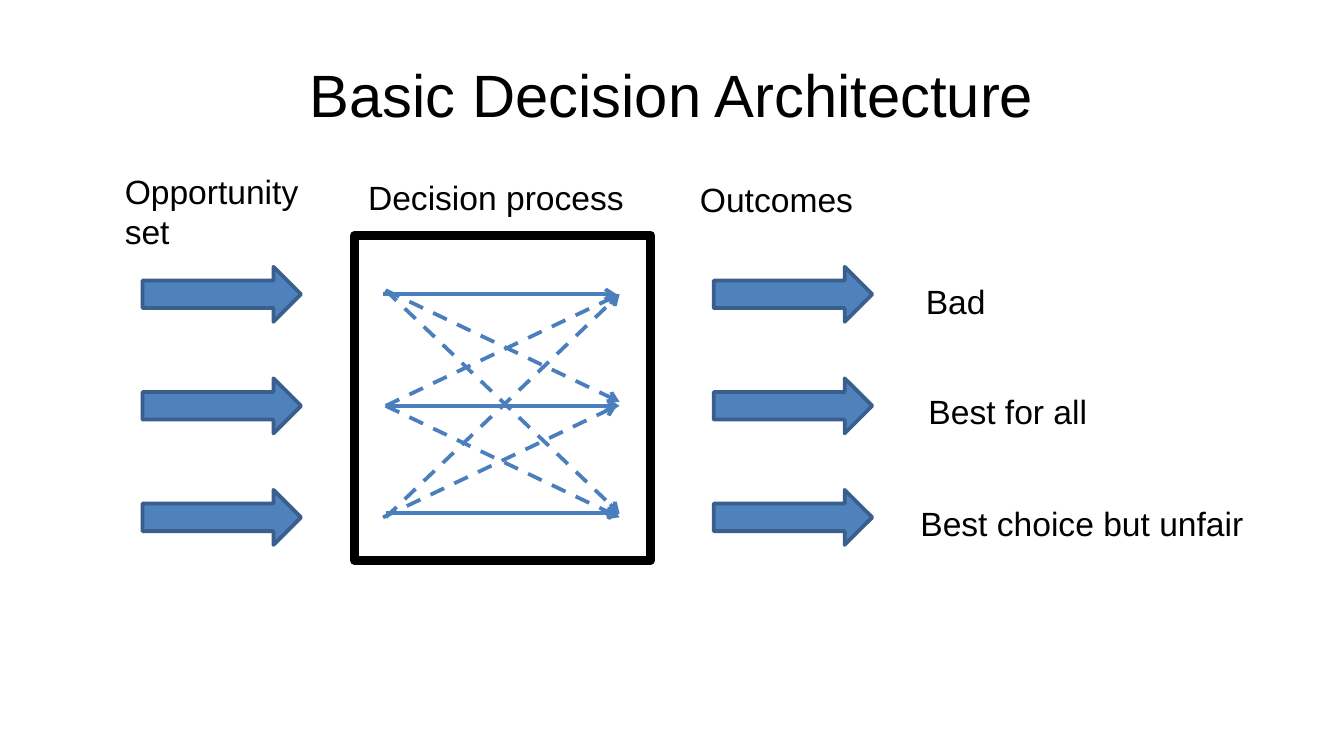
import pptx
import pptx.util
from pptx.dml.color import RGBColor
from pptx.enum.dml import MSO_LINE
from pptx.enum.shapes import MSO_CONNECTOR, MSO_SHAPE
from pptx.enum.text import MSO_ANCHOR, MSO_AUTO_SIZE, PP_ALIGN
from pptx.oxml.ns import qn
from lxml import etree

Inches = pptx.util.Inches

# Content
TITLE = "Basic Decision Architecture"
# text, (left, top, width, height), wraps
LABELS = [
    ("Opportunity set", (0.83, 1.22, 1.65, 0.71), True),
    ("Decision process", (2.64, 1.27, 2.12, 0.4), False),
    ("Outcomes", (5.11, 1.28, 1.35, 0.4), False),
    ("Bad", (6.79, 2.04, 0.65, 0.4), False),
    ("Best for all", (6.81, 2.86, 1.39, 0.4), False),
    ("Best choice but unfair", (6.75, 3.69, 2.63, 0.4), False),
]
# opportunity row, outcome row, shift right, shift down
CHOICES = [
    (1, 1, 0, 0), (1, 0, 0, 0), (2, 0, 0, 0),
    (0, 0, -0.02, 0), (0, 1, 0, -0.03), (0, 2, 0, -0.03),
    (2, 2, 0, -0.03), (1, 2, 0, 0), (2, 1, -0.02, 0),
]

THEME = {
    "font": "Arial", "title": 32, "label": 18,
    "text": "000000", "frame": "000000", "frame_width": 5,
    "arrow": "4F81BD", "arrow_edge": "3A5F8C", "choice": "4B7EBC",
    "line_width": 2,
}

# Layout
PAGE_WIDTH = Inches(10)
PAGE_HEIGHT = PAGE_WIDTH * 9 // 16
ROW_TOP, ROW_STEP, ROWS = 2.19, 0.83, 3
ARROW_LEFTS, ARROW_WIDTH, ARROW_HEIGHT = (1.06, 5.31), 1.18, 0.41
CHOICE_LEFT, CHOICE_RIGHT = 2.87, 4.61
FRAME = (2.64, 1.75, 2.2, 2.42)


def row_center(row):
    return ROW_TOP + row * ROW_STEP


def write(box, text, size, align=PP_ALIGN.LEFT, anchor=MSO_ANCHOR.TOP,
          wrap=True, fit=MSO_AUTO_SIZE.NONE):
    frame = box.text_frame
    frame.word_wrap = wrap
    frame.auto_size = fit
    frame.vertical_anchor = anchor
    para = frame.paragraphs[0]
    para.alignment = align
    span = para.add_run()
    span.text = text
    span.font.name = THEME["font"]
    span.font.size = pptx.util.Pt(size)
    span.font.color.rgb = RGBColor.from_string(THEME["text"])


def set_line(line, color, width):
    line.color.rgb = RGBColor.from_string(color)
    line.width = pptx.util.Pt(width)


def add_block(page, kind, area, edge, width, fill=None):
    block = page.shapes.add_shape(kind, *map(Inches, area))
    block.shadow.inherit = False
    if fill:
        block.fill.solid()
        block.fill.fore_color.rgb = RGBColor.from_string(fill)
    else:
        block.fill.background()
    set_line(block.line, edge, width)
    etree.SubElement(block._element.spPr.find(qn("a:ln")), qn("a:round"))


def add_choice(page, start, end, dashed):
    choice = page.shapes.add_connector(
        MSO_CONNECTOR.STRAIGHT, *map(Inches, start + end))
    set_line(choice.line, THEME["choice"], THEME["line_width"])
    if dashed:
        choice.line.dash_style = MSO_LINE.DASH
    properties = choice._element.spPr
    etree.SubElement(properties.find(qn("a:ln")), qn("a:tailEnd"), type="arrow")
    etree.SubElement(properties, qn("a:effectLst"))


def main():
    deck = pptx.Presentation()
    deck.slide_width, deck.slide_height = PAGE_WIDTH, PAGE_HEIGHT
    page = deck.slides.add_slide(deck.slide_layouts[5])

    # Title
    title = page.shapes.title
    title.left, title.top, title.width, title.height = map(
        Inches, (0.5, 0.23, 9, 0.94))
    write(title, TITLE, THEME["title"], align=PP_ALIGN.CENTER,
          anchor=MSO_ANCHOR.MIDDLE)

    # Frame of the decision process
    add_block(page, MSO_SHAPE.RECTANGLE, FRAME,
              THEME["frame"], THEME["frame_width"])

    # Block arrows into and out of the process
    for left in ARROW_LEFTS:
        for row in range(ROWS):
            top = row_center(row) - ARROW_HEIGHT / 2
            add_block(page, MSO_SHAPE.RIGHT_ARROW,
                      (left, top, ARROW_WIDTH, ARROW_HEIGHT),
                      THEME["arrow_edge"], THEME["line_width"],
                      fill=THEME["arrow"])

    # Labels
    for text, area, wrap in LABELS:
        box = page.shapes.add_textbox(*map(Inches, area))
        write(box, text, THEME["label"], wrap=wrap,
              fit=MSO_AUTO_SIZE.SHAPE_TO_FIT_TEXT)

    # Choices: solid along a row, dashed across rows
    for source, target, right, down in CHOICES:
        add_choice(page,
                   (CHOICE_LEFT + right, row_center(source) + down),
                   (CHOICE_RIGHT + right, row_center(target) + down),
                   dashed=source != target)

    deck.save("out.pptx")


if __name__ == "__main__":
    main()
